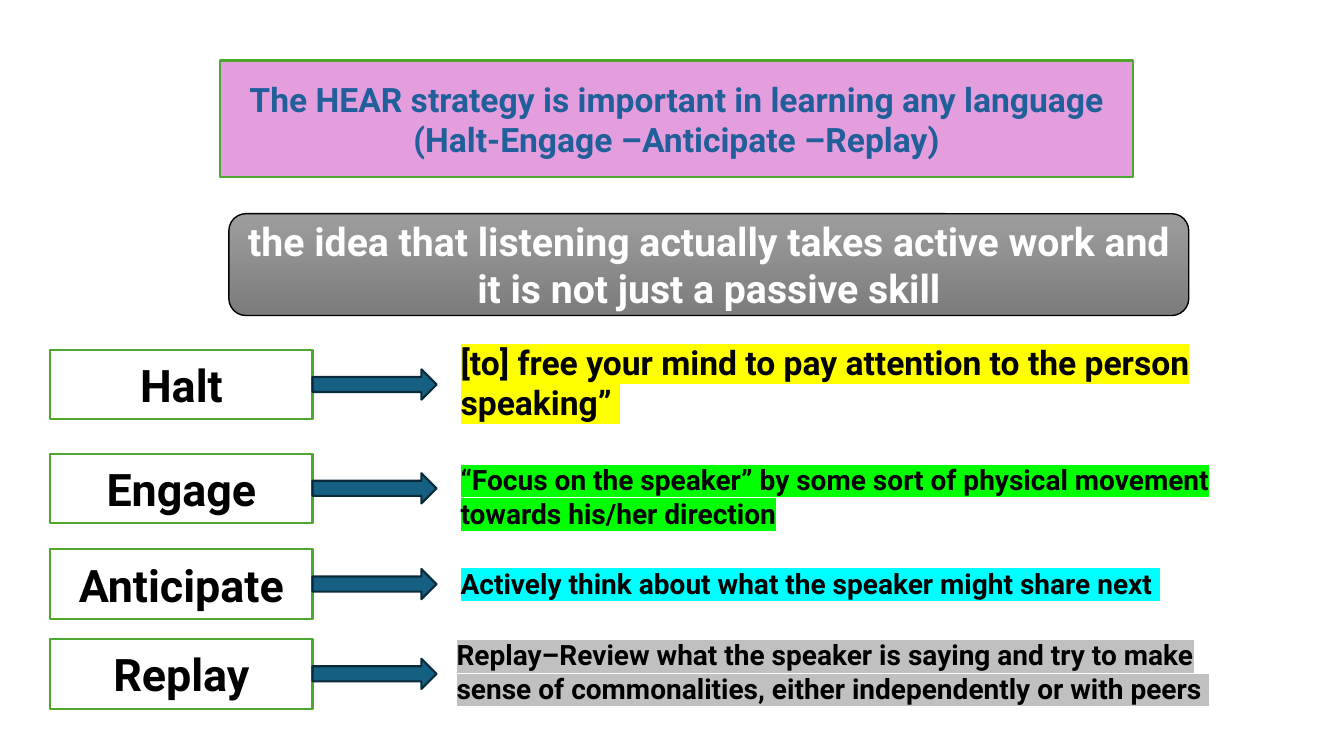
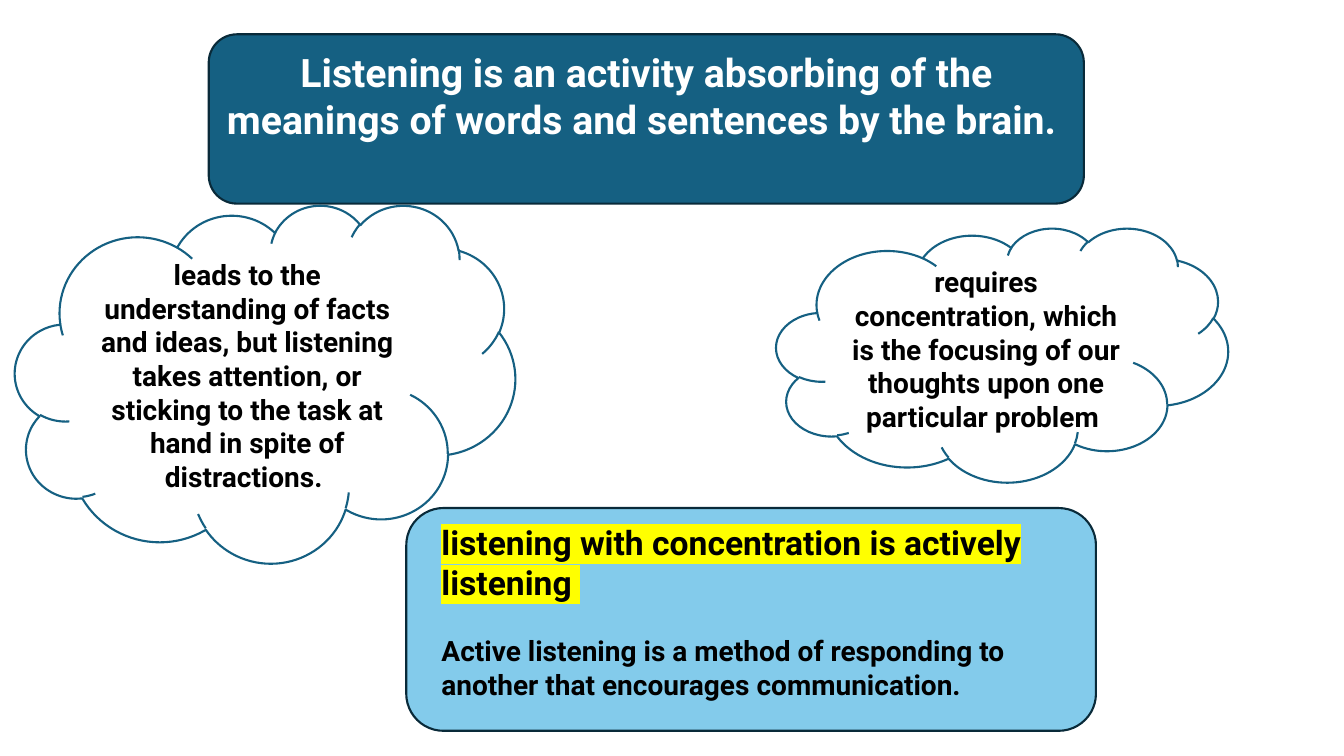
from lxml.etree import SubElement
from pptx import Presentation
from pptx.dml.color import RGBColor as Rgb
from pptx.enum.shapes import MSO_SHAPE as Kind
from pptx.enum.text import MSO_ANCHOR as Anchor, MSO_AUTO_SIZE as Fit, PP_ALIGN as Align
from pptx.oxml.ns import qn
from pptx.util import Inches, Pt

FONT = "Roboto"
BLACK = Rgb(0, 0, 0)
WHITE = Rgb(0xFF, 0xFF, 0xFF)
TEAL = Rgb(0x15, 0x60, 0x82)
NAVY = Rgb(0x09, 0x2A, 0x39)
BLUE = Rgb(0x21, 0x5F, 0x9A)
SKY = Rgb(0x83, 0xCB, 0xEB)
PINK = Rgb(0xE5, 0x9E, 0xDD)
GREEN = Rgb(0x4E, 0xA7, 0x2E)
GREYS = Rgb(0x9D, 0x9D, 0x9D), Rgb(0x7C, 0x7C, 0x7C)
YELLOW = Rgb(0xFF, 0xFF, 0)
LIME = Rgb(0, 0xFF, 0)
CYAN = Rgb(0, 0xFF, 0xFF)
SILVER = Rgb(0xC0, 0xC0, 0xC0)

HEAR = [
    "The HEAR strategy is important in learning any language",
    "(Halt-Engage –Anticipate –Replay)",
]
IDEA = "the idea that listening actually takes active work and it is not just a passive skill"
STEPS = [
    ("Halt", 3.47, "[to] free your mind to pay attention to the person speaking” ",
     24, YELLOW, (4.47, 3.34, 7.93, 0.91)),
    ("Engage", 4.5, "“Focus on the speaker” by some sort of physical movement towards his/her direction",
     20, LIME, (4.47, 4.54, 8.16, 0.77)),
    ("Anticipate", 5.45, "Actively think about what the speaker might share next ",
     20, CYAN, (4.47, 5.57, 8.44, 0.44)),
    ("Replay", 6.34, "Replay–Review what the speaker is saying and try to make sense of "
     "commonalities, either independently or with peers ",
     20, SILVER, (4.43, 6.28, 8.01, 0.77)),
]
LEFT, WIDE, HIGH = 0.5, 2.6, 0.69
REACH, THICK = 1.23, 0.3

LISTEN = "Listening is an activity absorbing of the meanings of words and sentences by the brain. "
CLOUDS = [
    ("leads to the understanding of facts and ideas, but listening takes attention, "
     "or sticking to the task at hand in spite of distractions. ", (0.15, 2.03, 4.96, 3.55)),
    ("requires concentration, which is the focusing of our thoughts upon one "
     "particular problem ", (7.7, 2.26, 4.48, 2.52)),
]
ACTIVE = "listening with concentration is actively listening "
METHOD = "Active listening is a method of responding to another that encourages communication."


def place(shape, box):
    shape.left, shape.top, shape.width, shape.height = map(Inches, box)


def paint(shape, fill, line, width=1.5):
    if fill is not None:
        shape.fill.solid()
        shape.fill.fore_color.rgb = fill
    shape.line.color.rgb = line
    shape.line.width = Pt(width)


def add_run(para, text, size, color=BLACK, mark=None):
    run = para.add_run()
    run.text = text
    font = run.font
    font.name, font.size, font.bold = FONT, Pt(size), True
    font.color.rgb = color
    if mark is not None:
        props = run._r.get_or_add_rPr()
        light = SubElement(props, qn("a:highlight"))
        SubElement(light, qn("a:srgbClr")).set("val", str(mark))
        props.find(qn("a:solidFill")).addnext(light)


def write(shape, texts, size, color=BLACK, mark=None, align=Align.CENTER, anchor=Anchor.MIDDLE):
    frame = shape.text_frame
    frame.word_wrap = True
    frame.auto_size = Fit.NONE
    frame.vertical_anchor = anchor
    for i, text in enumerate(texts):
        para = frame.add_paragraph() if i else frame.paragraphs[0]
        para.alignment = align
        add_run(para, text, size, color, mark)


def add_shape(slide, kind, box, fill, line, width=1.5):
    shape = slide.shapes.add_shape(kind, *map(Inches, box))
    shape.shadow.inherit = False
    paint(shape, fill, line, width)
    return shape


def set_title(slide, texts, box, size, color):
    title = slide.shapes.title
    place(title, box)
    write(title, texts, size, color)
    return title


def add_hear(slide):
    title = set_title(slide, HEAR, (2.18, 0.6, 9.06, 1.16), 24, BLUE)
    paint(title, PINK, GREEN)

    idea = add_shape(slide, Kind.ROUNDED_RECTANGLE, (2.27, 2.12, 9.52, 1.01), None, BLACK, 1)
    idea.fill.gradient()
    idea.fill.gradient_angle = 270
    for stop, grey in zip(idea.fill.gradient_stops, GREYS):
        stop.color.rgb = grey
    write(idea, [IDEA], 28, WHITE)

    for name, top, text, size, mark, box in STEPS:
        label = add_shape(slide, Kind.RECTANGLE, (LEFT, top, WIDE, HIGH), WHITE, GREEN)
        write(label, [name], 32)
        mid = top + (HIGH - THICK) / 2
        add_shape(slide, Kind.RIGHT_ARROW, (LEFT + WIDE, mid, REACH, THICK), TEAL, NAVY)
        note = slide.shapes.add_textbox(*map(Inches, box))
        write(note, [text], size, mark=mark, align=Align.LEFT, anchor=Anchor.TOP)


def add_listen(slide):
    banner = add_shape(slide, Kind.ROUNDED_RECTANGLE, (2.07, 0.34, 8.68, 1.68), TEAL, NAVY)
    title = set_title(slide, [LISTEN], (2.15, 0.43, 8.52, 1.03), 28, WHITE)
    title._element.addprevious(banner._element)

    for text, box in CLOUDS:
        cloud = add_shape(slide, Kind.CLOUD, box, WHITE, TEAL)
        write(cloud, [text], 20)

    panel = add_shape(slide, Kind.ROUNDED_RECTANGLE, (4.03, 5.04, 6.84, 2.21), SKY, NAVY)
    write(panel, [ACTIVE], 24, mark=YELLOW, align=Align.LEFT, anchor=Anchor.TOP)
    frame = panel.text_frame
    frame.margin_left, frame.margin_top = Inches(0.24), Inches(0.03)
    para = frame.add_paragraph()
    para.alignment = Align.LEFT
    para.space_before = Pt(22)
    add_run(para, METHOD, 20)


def main():
    deck = Presentation()
    deck.slide_width, deck.slide_height = Inches(13.33), Inches(7.5)
    for build in (add_hear, add_listen):
        build(deck.slides.add_slide(deck.slide_layouts[5]))
    deck.save("out.pptx")


if __name__ == "__main__":
    main()
